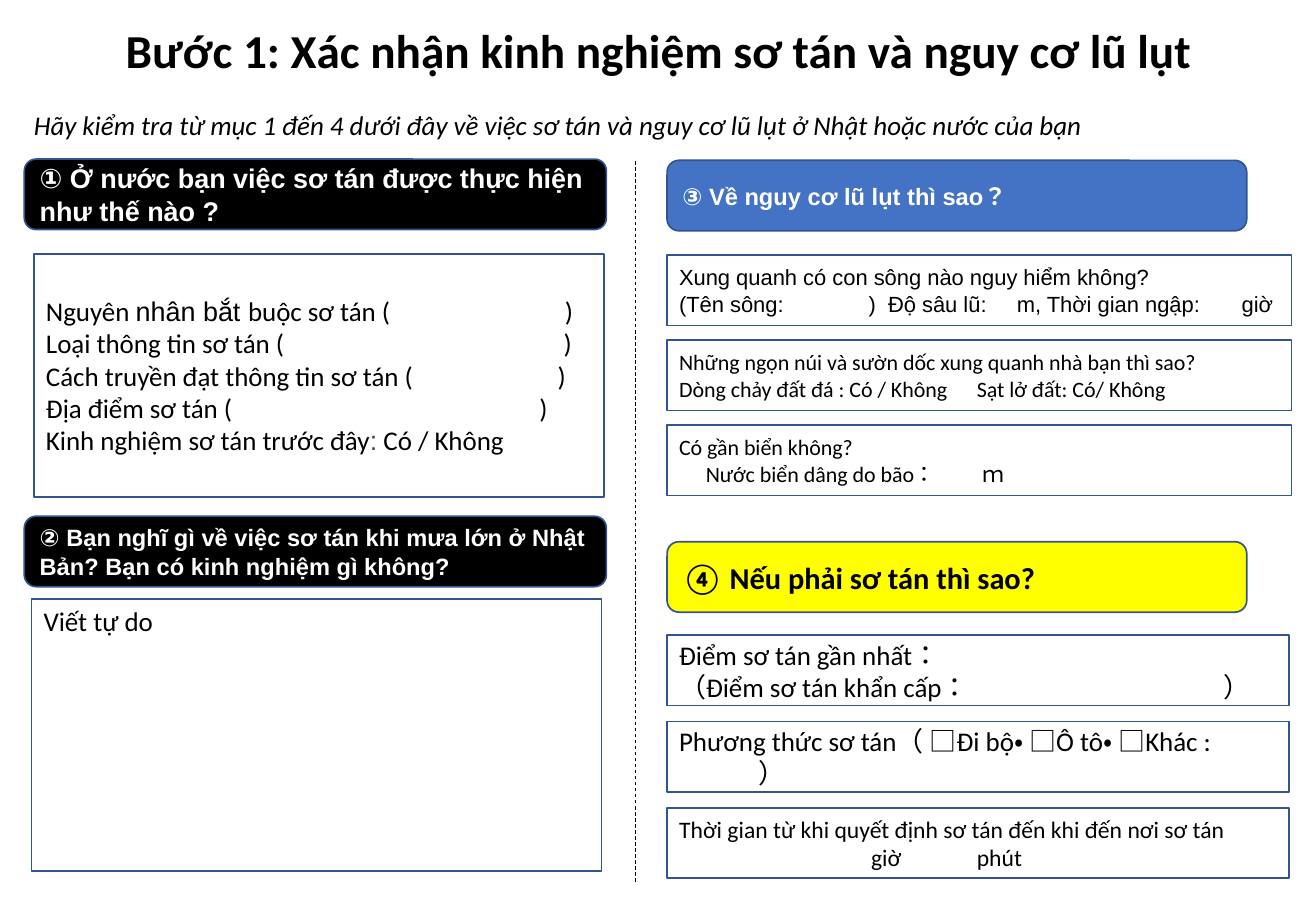
import dataclasses

import lxml.etree
import pptx
import pptx.dml.color
import pptx.enum.dml
import pptx.enum.lang
import pptx.enum.shapes
import pptx.enum.text
import pptx.oxml.ns
import pptx.util

Inches = pptx.util.Inches
Anchor = pptx.enum.text.MSO_ANCHOR
Align = pptx.enum.text.PP_ALIGN
Shape = pptx.enum.shapes.MSO_SHAPE


@dataclasses.dataclass(frozen=True)
class Theme:
    black: str = "000000"
    white: str = "FFFFFF"
    gray: str = "444545"
    edge: str = "325491"
    blue: str = "4472C4"
    yellow: str = "FFFF00"
    sans: str = "Calibri"
    arial: str = "Arial"
    title: int = 28
    head: int = 18
    body: int = 16
    small: int = 14
    note: int = 13
    line: float = 1
    dash: float = 0.5


THEME = Theme()


def rgb(code):
    return pptx.dml.color.RGBColor.from_string(code)


def style(run, size, font=THEME.sans, color=THEME.black, bold=False, italic=False):
    run.font.size = pptx.util.Pt(size)
    run.font.name = font
    run.font.color.rgb = rgb(color)
    run.font.bold = bold
    run.font.italic = italic
    run.font.language_id = pptx.enum.lang.MSO_LANGUAGE_ID.JAPANESE


def set_tabs(para, stops):
    props = para._p.get_or_add_pPr()
    tabs = lxml.etree.SubElement(props, pptx.oxml.ns.qn("a:tabLst"))
    for stop in stops:
        tab = lxml.etree.SubElement(tabs, pptx.oxml.ns.qn("a:tab"))
        tab.set("pos", str(Inches(stop)))
        tab.set("algn", "l")


def write(shape, rows, size, anchor=Anchor.MIDDLE, align=Align.LEFT, **look):
    frame = shape.text_frame
    frame.text = "\n".join(text for text, *stops in rows)
    frame.word_wrap = True
    frame.auto_size = pptx.enum.text.MSO_AUTO_SIZE.NONE
    frame.vertical_anchor = anchor
    for para, (text, *stops) in zip(frame.paragraphs, rows):
        para.alignment = align
        para.space_before = pptx.util.Pt(0)
        if stops:
            set_tabs(para, stops)
        for run in para.runs:
            style(run, size, **look)


def panel(slide, box, rows, size, kind=Shape.RECTANGLE, fill=None, edge=True, **look):
    shape = slide.shapes.add_shape(kind, *map(Inches, box))
    shape.shadow.inherit = False
    if fill:
        shape.fill.solid()
        shape.fill.fore_color.rgb = rgb(fill)
    else:
        shape.fill.background()
    if edge:
        shape.line.color.rgb = rgb(THEME.edge)
        shape.line.width = pptx.util.Pt(THEME.line)
    else:
        shape.line.fill.background()
    write(shape, rows, size, **look)
    return shape


def banner(slide, box, text, size, fill, **look):
    panel(slide, box, [(text,)], size, Shape.ROUNDED_RECTANGLE, fill, bold=True, **look)


def split(para, parts):
    para.text = parts[0][0]
    for text, font, color in parts[1:]:
        para.add_run().text = text
    for run, (text, font, color) in zip(para.runs, parts):
        style(run, THEME.body, font, color)


def header(slide, box):
    left, top, width, height = box
    title = slide.shapes.title
    title.left, title.top = Inches(left), Inches(top + 0.05)
    title.width, title.height = Inches(width), Inches(0.71)
    write(title, [("Bước 1: Xác nhận kinh nghiệm sơ tán và nguy cơ lũ lụt",)],
          THEME.title, align=Align.CENTER, bold=True)
    panel(slide, (left + 0.18, top + 0.8, 10.43, 0.45),
          [("Hãy kiểm tra từ mục 1 đến 4 dưới đây về việc sơ tán và "
            "nguy cơ lũ lụt ở Nhật hoặc nước của bạn",)],
          THEME.body, fill=THEME.white, edge=False, italic=True)


def form(slide, box):
    rows = [
        ("Nguyên nhân bắt buộc sơ tán (\t)", 4.27),
        ("Loại thông tin sơ tán (\t)", 4.26),
        ("Cách truyền đạt thông tin sơ tán (\t)", 4.21),
        ("Địa điểm sơ tán (\t)", 4.06),
        ("Kinh nghiệm sơ tán trước đây: Có / Không",),
    ]
    paras = panel(slide, box, rows, THEME.body).text_frame.paragraphs
    split(paras[0], [("Nguyên ", THEME.sans, THEME.black),
                     ("nhân bắt ", THEME.arial, THEME.black),
                     ("buộc sơ tán (\t)", THEME.sans, THEME.black)])
    split(paras[-1], [("Kinh nghiệm sơ tán trước đây", THEME.sans, THEME.black),
                      (":", THEME.arial, THEME.gray),
                      (" Có / Không", THEME.sans, THEME.black)])


def past(slide, box):
    left, top, width, height = box
    look = dict(fill=THEME.black, font=THEME.arial, color=THEME.white)
    banner(slide, (left, top, width, 0.58),
           "① Ở nước bạn việc sơ tán được thực hiện như thế nào ?", THEME.body, **look)
    form(slide, (left + 0.08, top + 0.78, 4.69, 2))
    banner(slide, (left, top + 2.94, width, 0.58),
           "② Bạn nghĩ gì về việc sơ tán khi mưa lớn ở Nhật Bản? Bạn có kinh nghiệm gì không?",
           THEME.small, **look)
    panel(slide, (left + 0.06, top + 3.62, 4.69, 2.24), [("Viết tự do",)],
          THEME.body, anchor=Anchor.TOP)


def stack(slide, box, step, cards):
    left, top, width, height = box
    for i, (rows, size, font) in enumerate(cards):
        card = panel(slide, (left, top + i * step, width, height), rows, size, font=font)
        card.text_frame.margin_right = 0


def risk(slide, box):
    left, top, width, height = box
    banner(slide, (left, top, 4.77, 0.58), "③ Về nguy cơ lũ lụt thì sao？",
           THEME.small, THEME.blue, font=THEME.arial, color=THEME.white)
    stack(slide, (left, top + 0.78, width, 0.58), 0.7, [
        ([("Xung quanh có con sông nào nguy hiểm không?",),
          ("(Tên sông:\t)\tĐộ sâu lũ:\tm, Thời gian ngập:\tgiờ", 1.56, 1.72, 2.78, 4.63)],
         THEME.note, THEME.arial),
        ([("Những ngọn núi và sườn dốc xung quanh nhà bạn thì sao?",),
          ("Dòng chảy đất đá : Có / Không\tSạt lở đất: Có/ Không", 2.45)],
         THEME.note, THEME.sans),
        ([("Có gần biển không?",),
          ("\tNước biển dâng do bão：\tｍ", 0.22, 2.5)],
         THEME.note, THEME.sans),
    ])


def plan(slide, box):
    left, top, width, height = box
    banner(slide, (left, top, 4.77, 0.58), "④ Nếu phải sơ tán thì sao?",
           THEME.head, THEME.yellow)
    stack(slide, (left, top + 0.77, width, 0.58), 0.71, [
        ([("Điểm sơ tán gần nhất：",),
          ("（Điểm sơ tán khẩn cấp：\t）", 4.48)], THEME.body, THEME.sans),
        ([("Phương thức sơ tán（ □Đi bộ・ □Ô tô・ □Khác :\v\t）", 0.65)],
         THEME.body, THEME.sans),
        ([("Thời gian từ khi quyết định sơ tán đến khi đến nơi sơ tán",),
          ("\tgiờ\tphút", 1.58, 2.45)], THEME.small, THEME.sans),
    ])


def divide(slide, box):
    left, top, width, height = box
    rule = slide.shapes.add_connector(
        pptx.enum.shapes.MSO_CONNECTOR.STRAIGHT,
        *map(Inches, (left, top + height, left + width, top)))
    rule.line.color.rgb = rgb(THEME.black)
    rule.line.width = pptx.util.Pt(THEME.dash)
    rule.line.dash_style = pptx.enum.dml.MSO_LINE.DASH
    lxml.etree.SubElement(rule._element.spPr, pptx.oxml.ns.qn("a:effectLst"))


def main():
    deck = pptx.Presentation()
    deck.slide_width, deck.slide_height = Inches(10.83), Inches(7.5)
    slide = deck.slides.add_slide(deck.slide_layouts[5])
    header(slide, (0, 0, 10.83, 1.25))
    past(slide, (0.2, 1.31, 4.79, 5.86))
    divide(slide, (5.23, 1.31, 0, 5.95))
    risk(slide, (5.49, 1.32, 5.14, 2.76))
    plan(slide, (5.49, 4.46, 5.12, 2.77))
    deck.save("out.pptx")


if __name__ == "__main__":
    main()
